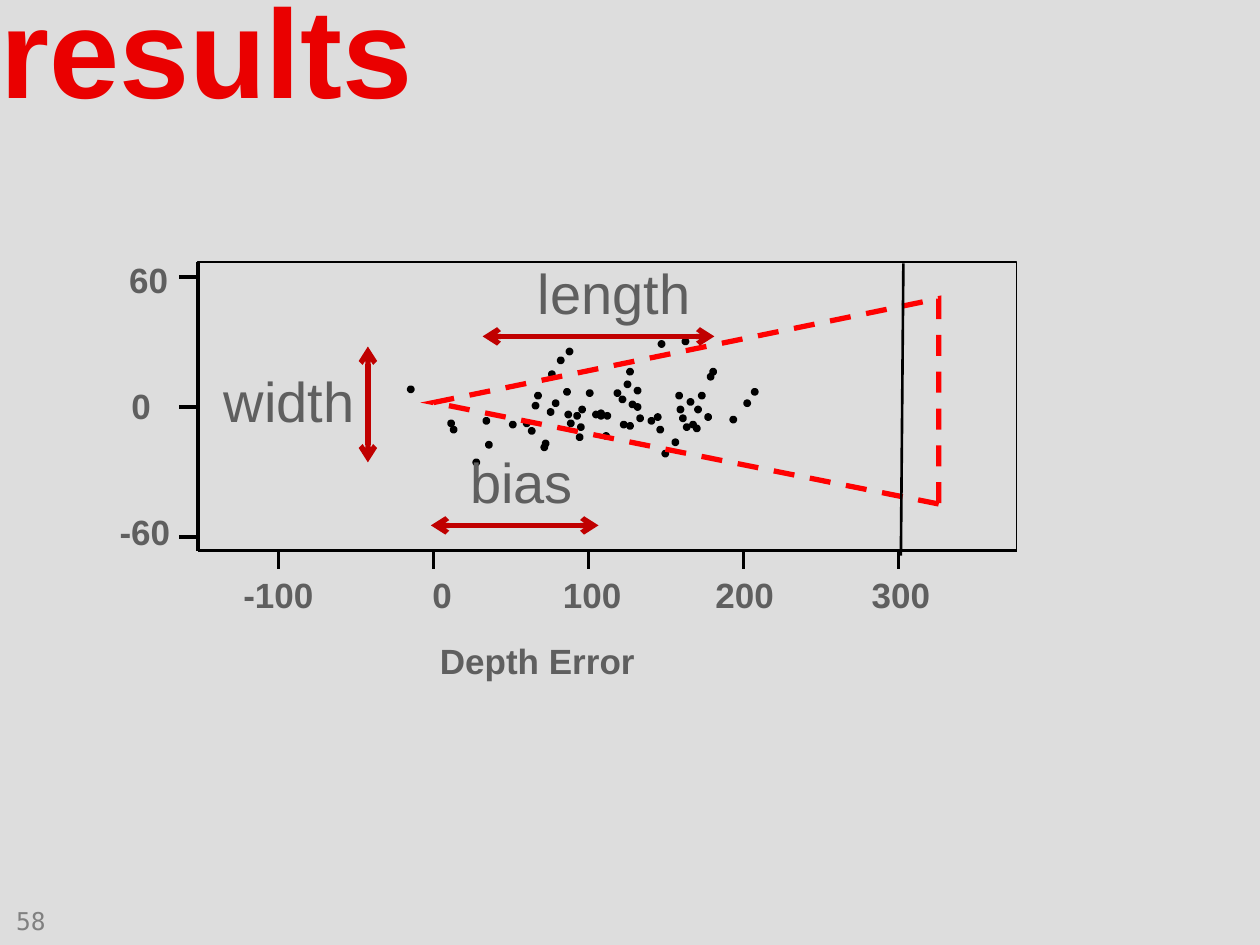
"""Build the results slide: a depth-error scatter with length, width and bias marked."""
from dataclasses import dataclass

from lxml import etree
from pptx import Presentation, util as u
from pptx.dml.color import RGBColor
from pptx.enum import dml, shapes, text
from pptx.oxml import ns


@dataclass(frozen=True)
class Theme:
    background: str = "DDDDDD"
    heading: str = "EA0000"
    label: str = "5F5F5F"
    page: str = "808080"
    ink: str = "000000"
    cone: str = "FF0101"
    arrow: str = "C00000"
    font: str = "Arial"
    mono: str = "DejaVu Sans Mono"
    heading_size: int = 72
    note_size: int = 32
    tick_size: int = 20
    page_size: int = 14
    hairline: float = 0
    limit: float = 1.5
    bold_line: float = 3


THEME = Theme()
SLIDE = (10, 7.5)
PLOT = (1.57, 2.08, 6.5, 2.29)
ORIGIN = (3.44, 3.23)
COLUMN, ROW = 1.23, 1.03
TICK = 0.15
DOT = 0.02
LABEL_WIDTH = 1.46

X_TICKS = [("-100", -1, 2.21), ("0", 0, 3.51), ("100", 1, 4.7),
           ("200", 2, 5.91), ("300", 3, 7.15)]
Y_TICKS = [("60", -1, 1.18), ("0", 0, 1.12), ("-60", 1, 1.15)]
MEASURES = [
    ("bias", (2.94, 3.5, 2.4, 0.64), (3.42, 4.17), (4.75, 4.17)),
    ("length", (3.58, 2, 2.59, 0.64), (3.83, 2.67), (5.67, 2.67)),
    ("width", (1, 2.86, 2.59, 0.64), (2.92, 3.67), (2.92, 2.75)),
]
TRIALS = [
    (3.87, 3.52), (4.51, 2.78), (3.25, 3.08), (4.72, 3.28), (5.44, 3.38),
    (4.97, 3.04), (4.26, 3.13), (4.76, 3.27), (5.63, 2.98), (4.06, 3.36),
    (4.49, 3.1), (4.89, 3.11), (4.36, 3.26), (5.39, 3.24), (5.21, 3.3),
    (4.37, 2.96), (4.4, 3.19), (4.44, 2.85), (5.92, 3.19), (5.98, 3.1),
    (4.93, 3.16), (3.77, 3.66), (4.24, 3.21), (3.85, 3.33), (5.38, 3.13),
    (4.94, 3.36), (3.59, 3.4), (4.76, 3.29), (4.32, 3.51), (4.31, 3.54),
    (4.57, 3.29), (4.5, 3.28), (4.59, 3.46), (4.21, 3.41), (4.6, 3.38),
    (3.57, 3.35), (5.49, 3.36), (5.27, 3.59), (4.8, 3.45), (5.24, 2.72),
    (4.17, 3.35), (4.99, 2.94), (4.61, 3.24), (4.67, 3.11), (5.05, 3.22),
    (5.56, 3.13), (4.81, 3.29), (5.52, 3.39), (4.99, 3.37), (5.16, 3.33),
    (5.01, 3.2), (5.53, 3.24), (5.05, 3.09), (5.47, 3.18), (5.35, 3.5),
    (5.81, 3.32), (4.52, 3.35), (5.07, 3.31), (5.23, 3.4), (5.61, 3.3),
    (5.41, 3.31), (5.43, 2.7), (5.65, 2.94),
]


def inches(values):
    return [u.Inches(value) for value in values]


def write(slide, words, box, *, holder=None, size=THEME.tick_size, color=THEME.label,
          font=THEME.font, bold=False, align=text.PP_ALIGN.CENTER, wrap=True, inset=None):
    holder = holder or slide.shapes.add_textbox(*inches(box))
    holder.left, holder.top, holder.width, holder.height = inches(box)
    frame = holder.text_frame
    frame.word_wrap = wrap
    frame.auto_size = text.MSO_AUTO_SIZE.NONE
    frame.vertical_anchor = text.MSO_ANCHOR.TOP
    if inset is not None:
        for side in ("left", "top", "right", "bottom"):
            setattr(frame, f"margin_{side}", u.Inches(inset))
    paragraph = frame.paragraphs[0]
    paragraph.alignment = align
    run = paragraph.add_run()
    run.text = words
    run.font.name, run.font.size, run.font.bold = font, u.Pt(size), bold
    run.font.color.rgb = RGBColor.from_string(color)


def stroke(line, color, width):
    line.color.rgb = RGBColor.from_string(color)
    line.width = u.Pt(width)


def draw_line(slide, start, end, color=THEME.ink, width=THEME.hairline, arrows=False):
    line = slide.shapes.add_connector(shapes.MSO_CONNECTOR.STRAIGHT, *inches(start + end))
    stroke(line.line, color, width)
    etree.SubElement(line._element.spPr, ns.qn("a:effectLst"))
    if arrows:
        for tip in ("a:headEnd", "a:tailEnd"):
            etree.SubElement(line.line._get_or_add_ln(), ns.qn(tip), type="arrow")


def draw_outline(slide, kind, box, color=THEME.ink, width=THEME.hairline):
    outline = slide.shapes.add_shape(kind, *inches(box))
    outline.shadow.inherit = False
    outline.fill.background()
    stroke(outline.line, color, width)
    return outline


def draw_axes(slide):
    left, top, width, height = PLOT
    bottom = top + height
    draw_line(slide, (left, bottom), (left + width, bottom))
    draw_line(slide, (left, top), (left, bottom))
    for words, step, center in X_TICKS:
        x = ORIGIN[0] + step * COLUMN
        draw_line(slide, (x, bottom), (x, bottom + TICK))
        write(slide, words, (center - LABEL_WIDTH / 2, 4.5, LABEL_WIDTH, 0.75), bold=True)
    for row, (words, step, center) in enumerate(Y_TICKS):
        y = ORIGIN[1] + step * ROW
        draw_line(slide, (left, y), (left - TICK, y))
        write(slide, words, (center - LABEL_WIDTH / 2, 2 + row, LABEL_WIDTH, 0.75), bold=True)
    write(slide, "Depth Error", (2.15, 5.03, 4.23, 0.75), bold=True)


def draw_cone(slide):
    cone = draw_outline(slide, shapes.MSO_SHAPE.ISOSCELES_TRIANGLE,
                        (4.63, 1.18, 1.63, 4.01), THEME.cone, THEME.bold_line)
    cone.rotation = 270
    cone.adjustments[0] = 0.494
    cone.line.dash_style = dml.MSO_LINE.DASH
    etree.SubElement(cone.line._get_or_add_ln(), ns.qn("a:miter"), lim="800000")


def main():
    deck = Presentation()
    deck.slide_width, deck.slide_height = inches(SLIDE)
    slide = deck.slides.add_slide(deck.slide_layouts[5])
    slide.background.fill.solid()
    slide.background.fill.fore_color.rgb = RGBColor.from_string(THEME.background)

    write(slide, "58", (0.03, 7.14, 1.67, 0.5), size=THEME.page_size, color=THEME.page,
          font=THEME.mono, align=text.PP_ALIGN.LEFT)
    write(slide, "results", (0, -0.22, 3.31, 1.21), holder=slide.shapes.title,
          size=THEME.heading_size, color=THEME.heading, bold=True,
          align=text.PP_ALIGN.LEFT, wrap=False, inset=0)

    draw_axes(slide)
    for trial in TRIALS:
        draw_outline(slide, shapes.MSO_SHAPE.OVAL, trial + (DOT, DOT), width=THEME.bold_line)
    draw_outline(slide, shapes.MSO_SHAPE.RECTANGLE, PLOT)
    draw_cone(slide)
    draw_line(slide, (7.15, 4.41), (7.17, 2.09), width=THEME.limit)
    for words, box, start, end in MEASURES:
        draw_line(slide, start, end, THEME.arrow, THEME.bold_line, arrows=True)
        write(slide, words, box, size=THEME.note_size)

    deck.save("out.pptx")


if __name__ == "__main__":
    main()
